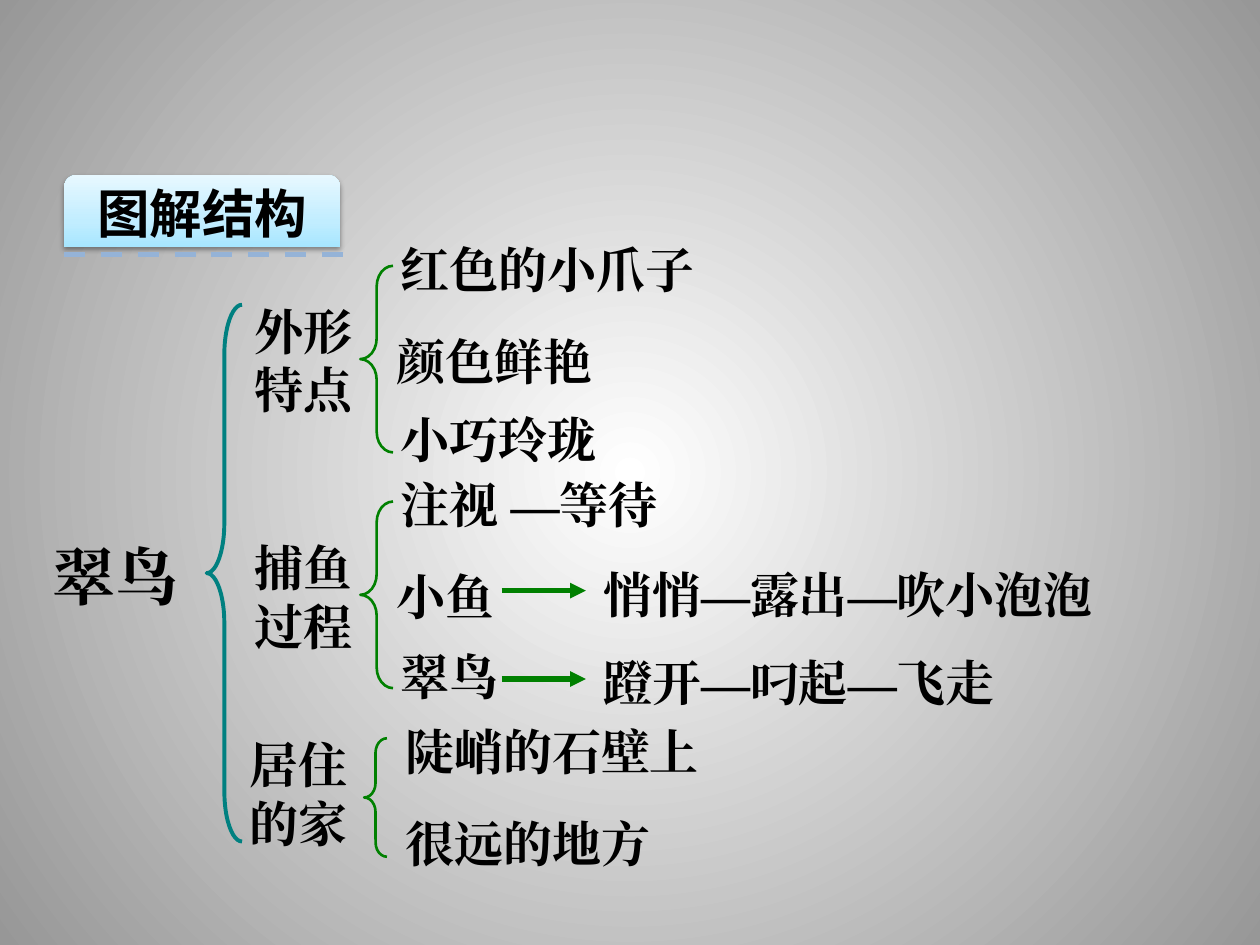
from lxml import etree
from pptx import Presentation
from pptx.dml.color import RGBColor
from pptx.enum.dml import MSO_LINE
from pptx.enum.shapes import MSO_CONNECTOR, MSO_SHAPE
from pptx.enum.text import MSO_ANCHOR, PP_ALIGN
from pptx.oxml import parse_xml
from pptx.oxml.ns import nsdecls, qn
from pptx.util import Pt

BRACE = MSO_SHAPE.LEFT_BRACE
BANNER = MSO_SHAPE.ROUND_2_SAME_RECTANGLE
STRAIGHT = MSO_CONNECTOR.STRAIGHT

BLACK = RGBColor(0, 0, 0)
GREEN = RGBColor(0, 0x80, 0)
TEAL = RGBColor(0, 0x80, 0x80)
DASH_BLUE = RGBColor(0x95, 0xB3, 0xD7)
TITLE_FONT = "Noto Sans CJK JP"
BODY_FONT = "Times New Roman"

BACKGROUND_STOPS = [(0, "FFFFFF"), (100, "979797")]
BANNER_STOPS = [(0, "A7E6FF"), (35, "C1EDFF"), (100, "E7F8FF")]
RADIAL = ('<a:path path="circle"><a:fillToRect l="50000" t="50000" '
          'r="50000" b="50000"/></a:path>')
UPWARD = '<a:lin ang="16200000" scaled="0"/>'

# Content; lengths in points
TITLE = "图解结构"
ROOT = ("翠鸟", 23, 303.8, 95)
ROOT_BRACE = (118.1, 174.2, 20.2, 306.7)

# Per group: label box (text, left, top, width), brace box, items (text, left, top, width)
GROUPS = [
    (("外形特点", 138.2, 168.5, 72), (205.9, 151.9, 18.7, 106.6), [
        ("红色的小爪子", 221.8, 133.2, 206),
        ("颜色鲜艳", 219.6, 185.8, 140),
        ("小巧玲珑", 221.8, 230.4, 144)]),
    (("捕鱼过程", 138.2, 303.8, 72), (205.9, 286.6, 18.7, 106.6), [
        ("注视 —等待", 221.8, 267.8, 206),
        ("小鱼", 219.6, 320.4, 73.4),
        ("翠鸟", 221.8, 365.8, 72)]),
    (("居住的家", 135.4, 416.2, 80.6), (208.1, 421.9, 13, 67.7), [
        ("陡峭的石壁上", 224.6, 409, 208),
        ("很远的地方", 224.6, 461.5, 163.4)]),
]
# Actions: text, text top, arrow height
ACTIONS = [("悄悄—露出—吹小泡泡", 319, 337.5), ("蹬开—叼起—飞走", 369.4, 388)]
ACTION_LEFT, ACTION_WIDTH = 337.7, 371.5
ARROW_START, ARROW_END = 286.6, 334.8


def set_gradient(fill, parent, stops, direction):
    fill.gradient()
    old = parent.find(qn("a:gradFill"))
    marks = "".join(f'<a:gs pos="{position * 1000}"><a:srgbClr val="{color}"/></a:gs>'
                    for position, color in stops)
    parent.replace(old, parse_xml(
        f'<a:gradFill {nsdecls("a")} rotWithShape="1">'
        f'<a:gsLst>{marks}</a:gsLst>{direction}</a:gradFill>'))


def write(shape, text, size, font_name):
    paragraph = shape.text_frame.paragraphs[0]
    paragraph.text = text
    font = paragraph.font
    font.name, font.size, font.bold = font_name, Pt(size), True
    font.color.rgb = BLACK
    latin = paragraph._p.pPr.find(qn("a:defRPr")).find(qn("a:latin"))
    latin.addnext(parse_xml(f'<a:ea {nsdecls("a")} typeface="{font_name}"/>'))
    return paragraph


def add_text(slide, text, left, top, width, lines=1, size=28):
    height = 7.2 + size * 1.2 * lines
    box = slide.shapes.add_textbox(Pt(left), Pt(top), Pt(width), Pt(height))
    box.text_frame.word_wrap = True
    write(box, text, size, BODY_FONT)


def add_brace(slide, box, color, weight, curve):
    brace = slide.shapes.add_shape(BRACE, *map(Pt, box))
    brace.shadow.inherit = False
    brace.fill.background()
    brace.line.color.rgb = color
    brace.line.width = Pt(weight)
    brace.adjustments[0] = curve
    brace.adjustments[1] = 0.5


def add_line(slide, start, end, height, color):
    line = slide.shapes.add_connector(STRAIGHT, Pt(start), Pt(height), Pt(end), Pt(height))
    line.line.color.rgb = color
    line.line.width = Pt(3)
    etree.SubElement(line._element.spPr, qn("a:effectLst"))
    return line


def add_banner(slide):
    banner = slide.shapes.add_shape(BANNER, Pt(36.7), Pt(100.1), Pt(157.7), Pt(41))
    properties = banner._element.spPr
    set_gradient(banner.fill, properties, BANNER_STOPS, UPWARD)
    banner.line.fill.background()
    properties.append(parse_xml(
        f'<a:effectLst {nsdecls("a")}><a:outerShdw blurRad="{Pt(3.1)}" dist="{Pt(1.6)}" '
        'dir="5400000" rotWithShape="0"><a:srgbClr val="000000">'
        '<a:alpha val="38000"/></a:srgbClr></a:outerShdw></a:effectLst>'))
    banner.text_frame.vertical_anchor = MSO_ANCHOR.MIDDLE
    write(banner, TITLE, 30, TITLE_FONT).alignment = PP_ALIGN.CENTER
    add_line(slide, 36.7, 200.2, 145.4, DASH_BLUE).line.dash_style = MSO_LINE.DASH


def main():
    presentation = Presentation()
    presentation.slide_width, presentation.slide_height = Pt(720), Pt(540)
    slide = presentation.slides.add_slide(presentation.slide_layouts[6])
    fill = slide.background.fill
    set_gradient(fill, slide._element.cSld.find(qn("p:bg")).find(qn("p:bgPr")),
                 BACKGROUND_STOPS, RADIAL)

    add_banner(slide)

    # Root and its branches
    add_text(slide, *ROOT, size=36)
    add_brace(slide, ROOT_BRACE, TEAL, 2.25, 1.416)
    for label, brace_box, items in GROUPS:
        add_text(slide, *label, lines=2)
        add_brace(slide, brace_box, GREEN, 1.5, 0.633)
        for item in items:
            add_text(slide, *item)

    # Arrows leading to the actions
    for text, top, arrow_height in ACTIONS:
        arrow = add_line(slide, ARROW_START, ARROW_END, arrow_height, GREEN)
        etree.SubElement(arrow.line._get_or_add_ln(), qn("a:tailEnd"), type="triangle")
        add_text(slide, text, ACTION_LEFT, top, ACTION_WIDTH)

    presentation.save("out.pptx")


if __name__ == "__main__":
    main()
